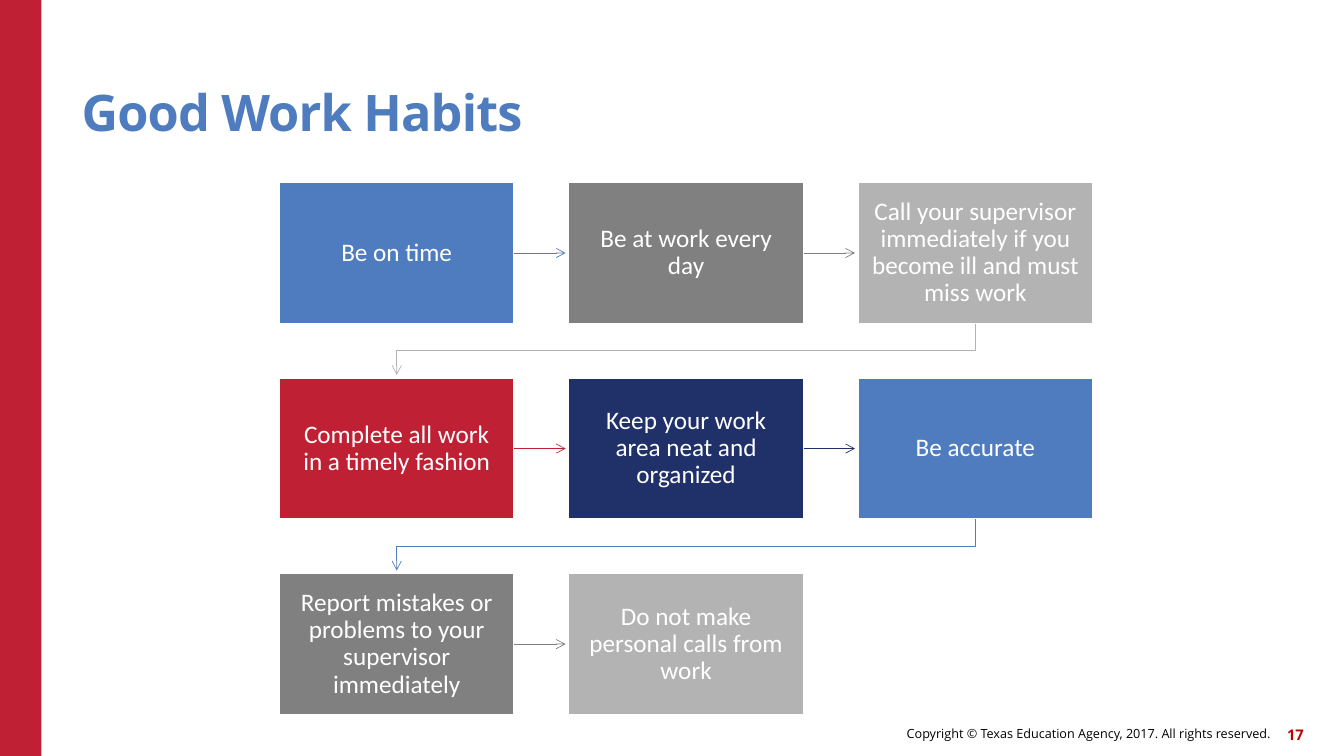
from lxml.etree import SubElement
from pptx import Presentation
from pptx.dml.color import RGBColor
from pptx.enum.shapes import MSO_CONNECTOR as Connector, MSO_SHAPE as Shape
from pptx.enum.text import MSO_ANCHOR as Anchor, PP_ALIGN as Align
from pptx.oxml.ns import qn
from pptx.util import Inches, Pt

COLORS = {"blue": "4E7CBE", "gray": "808080", "silver": "B3B3B3", "red": "C02033",
          "navy": "203069", "white": "FFFFFF", "black": "000000", "number": "C00000"}
HABITS = [
    ("Be on time", "blue"),
    ("Be at work every day", "gray"),
    ("Call your supervisor immediately if you become ill and must miss work", "silver"),
    ("Complete all work in a timely fashion", "red"),
    ("Keep your work area neat and organized", "navy"),
    ("Be accurate", "blue"),
    ("Report mistakes or problems to your supervisor immediately", "gray"),
    ("Do not make personal calls from work", "silver"),
]
COLUMNS = 3
BOX_WIDTH, BOX_HEIGHT = 2.33, 1.4
STEP_X, STEP_Y = 2.87, 1.94
ARROW_GAP = 0.03


def color(name):
    """Return the named colour."""
    return RGBColor.from_string(COLORS[name])


def write(shape, text, size, font="Open Sans", ink="black", bold=False,
          align=Align.LEFT, anchor=Anchor.MIDDLE, inset=0, leading=1.0, tracking=0):
    """Put one formatted paragraph into a shape."""
    frame = shape.text_frame
    frame.word_wrap = True
    frame.vertical_anchor = anchor
    frame.margin_left = frame.margin_right = Inches(inset)
    frame.margin_top = frame.margin_bottom = Inches(inset)
    para = frame.paragraphs[0]
    para.alignment = align
    para.line_spacing = leading
    span = para.add_run()
    span.text = text
    span.font.name = font
    span.font.size = Pt(size)
    span.font.bold = bold
    span.font.color.rgb = color(ink)
    if tracking:
        span.font._element.set("spc", str(round(tracking * 100)))


def add_text(page, box, text, size, **style):
    """Add a text box at left, top, width, height."""
    write(page.shapes.add_textbox(*map(Inches, box)), text, size, **style)


def add_block(page, box, fill, outline=None):
    """Add a flat rectangle."""
    block = page.shapes.add_shape(Shape.RECTANGLE, *map(Inches, box))
    block.shadow.inherit = False
    block.fill.solid()
    block.fill.fore_color.rgb = color(fill)
    if outline:
        block.line.color.rgb = color(outline)
        block.line.width = Pt(1)
    else:
        block.line.fill.background()
    return block


def style_arrow(arrow, ink):
    """Give a line its colour, width and open arrowhead."""
    arrow.line.color.rgb = color(ink)
    arrow.line.width = Pt(0.5)
    SubElement(arrow.line._get_or_add_ln(), qn("a:tailEnd"), type="arrow")


def link_across(page, source, target, ink):
    """Draw an arrow to the next box in the row."""
    middle = source.top + source.height // 2
    arrow = page.shapes.add_connector(Connector.STRAIGHT, source.left + source.width, middle,
                                      target.left - Inches(ARROW_GAP), middle)
    arrow.begin_connect(source, 3)
    style_arrow(arrow, ink)
    SubElement(arrow._element.spPr, qn("a:effectLst"))


def link_down(page, source, target, ink):
    """Draw a bent arrow to the first box of the next row."""
    start_x = source.left + source.width // 2
    end_x = target.left + target.width // 2
    bottom = source.top + source.height
    middle = (bottom + target.top) // 2
    builder = page.shapes.build_freeform(start_x, bottom)
    builder.add_line_segments([(start_x, middle), (end_x, middle),
                               (end_x, target.top - Inches(ARROW_GAP))], close=False)
    arrow = builder.convert_to_shape()
    arrow.fill.background()
    arrow.shadow.inherit = False
    style_arrow(arrow, ink)


def add_flow(page, left, top):
    """Lay out the habits in rows and link them in order."""
    boxes = []
    for index, (text, fill) in enumerate(HABITS):
        row, column = divmod(index, COLUMNS)
        box = (left + column * STEP_X, top + row * STEP_Y, BOX_WIDTH, BOX_HEIGHT)
        block = add_block(page, box, fill, outline="white")
        write(block, text, 18, font="Calibri", ink="white", align=Align.CENTER,
              inset=0.14, leading=0.9)
        boxes.append(block)
    for index, (source, target) in enumerate(zip(boxes, boxes[1:])):
        link = link_down if index % COLUMNS == COLUMNS - 1 else link_across
        link(page, source, target, HABITS[index][1])


def add_footer(page, left, top):
    """Add the copyright line and the page number."""
    add_text(page, (left, top, 6.46, 0.32),
             "Copyright © Texas Education Agency, 2017. All rights reserved.", 9,
             align=Align.RIGHT)
    add_text(page, (left + 6.37, top + 0.01, 0.42, 0.32), "17", 10.5,
             ink="number", bold=True, align=Align.RIGHT)


def main():
    """Build and save the slide."""
    deck = Presentation()
    deck.slide_width, deck.slide_height = Inches(13.33), Inches(7.5)
    page = deck.slides.add_slide(deck.slide_layouts[6])
    add_block(page, (0, 0, 0.41, 7.5), "red")
    add_footer(page, 6.14, 7.12)
    add_text(page, (0.81, 0.45, 11, 0.96), "Good Work Habits", 36, ink="blue", bold=True,
             anchor=Anchor.BOTTOM, leading=0.9, tracking=-0.6)
    add_flow(page, 2.77, 1.81)
    deck.save("out.pptx")


if __name__ == "__main__":
    main()
